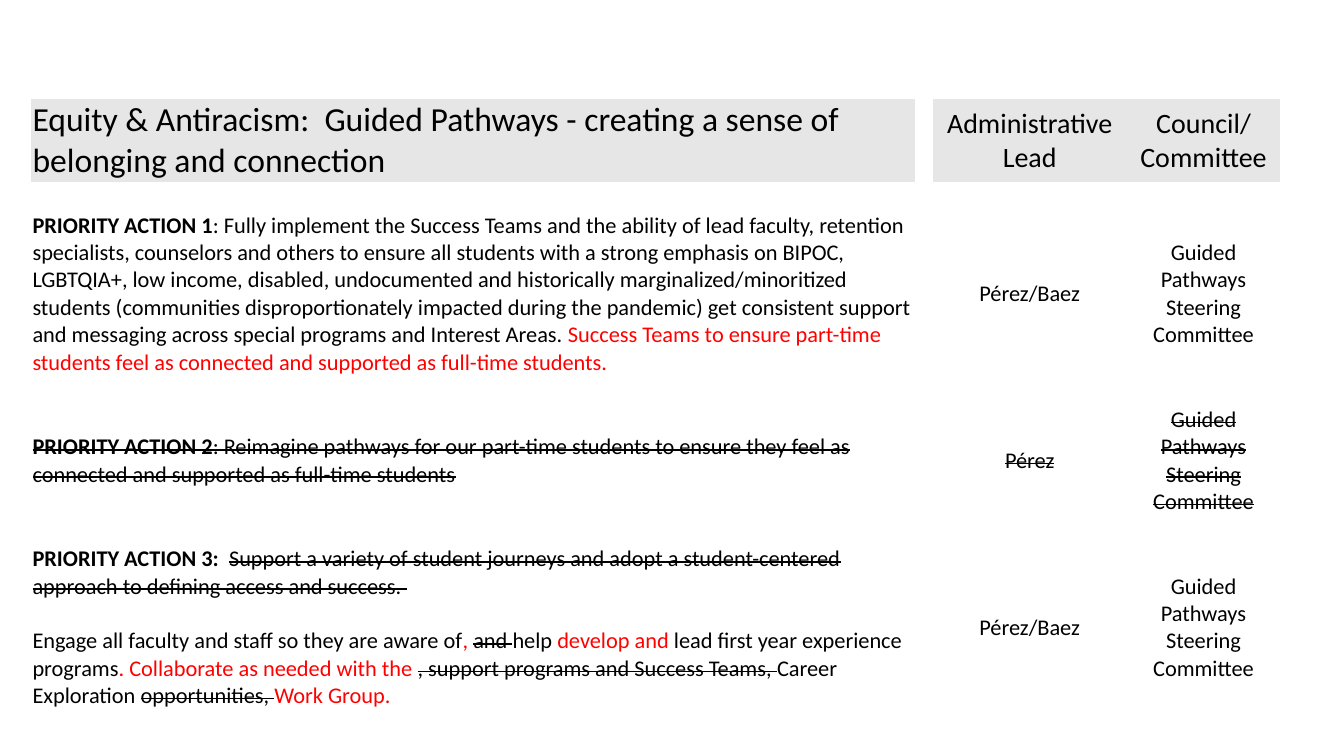
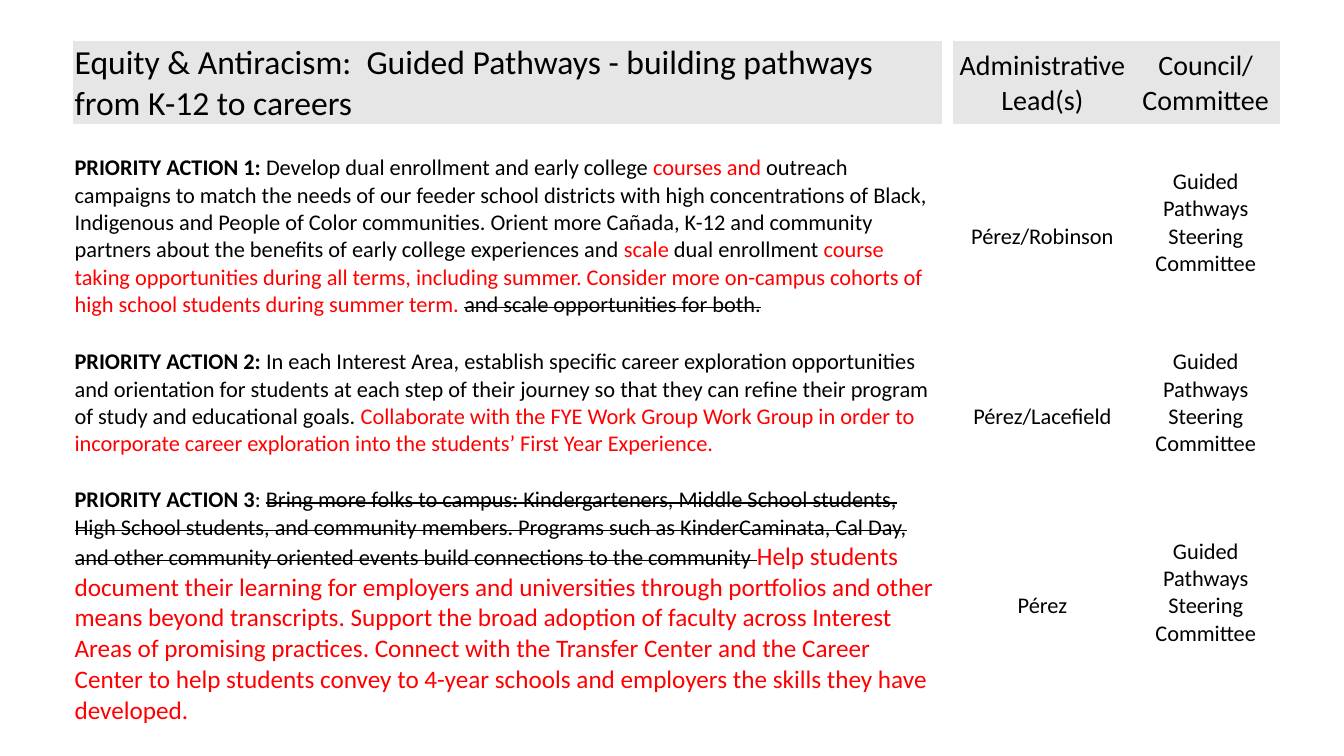
from pptx import Presentation
from pptx.dml.color import RGBColor
from pptx.enum.text import MSO_ANCHOR as Anchor, PP_ALIGN as Align
from pptx.oxml.ns import qn
from pptx.util import Cm, Pt
from lxml.etree import SubElement

COLORS = {"text": "000000", "revision": "FF0000", "band": "E7E6E6"}
FONT = "Calibri"
TITLE_SIZE, HEADING_SIZE, BODY_SIZE, LARGE_SIZE = 24, 20, 16, 18
LINE_HEIGHT = 0.69
INSET = 0.03
HEADER_HEIGHT = 2.08
PLAIN_TABLE_STYLE = "{2D5ABB26-0587-4C30-8999-92F81FD0307C}"
COMMITTEE = "Guided Pathways Steering Committee"

BOLD, STRUCK, RED, LARGE = "bold", "struck", "red", "large"


def row_height(lines):
    return lines * LINE_HEIGHT + INSET


def add_run(paragraph, text, marks=(), size=BODY_SIZE):
    run = paragraph.add_run()
    run.text = text
    font = run.font
    font.name = FONT
    font.size = Pt(LARGE_SIZE if LARGE in marks else size)
    font.bold = BOLD in marks
    font.color.rgb = RGBColor.from_string(COLORS["revision" if RED in marks else "text"])
    if STRUCK in marks:
        run._r.get_or_add_rPr().set("strike", "sngStrike")


def fill_cell(cell, paragraphs, align=Align.LEFT, size=BODY_SIZE, bottom=0.0):
    cell.vertical_anchor = Anchor.MIDDLE
    cell.margin_bottom = Cm(bottom)
    frame = cell.text_frame
    for index, runs in enumerate(paragraphs):
        paragraph = frame.add_paragraph() if index else frame.paragraphs[0]
        paragraph.alignment = align
        if index:
            paragraph.space_before = Pt(19.5)
        for text, *marks in runs:
            add_run(paragraph, text, marks, size)


def prepare_cell(cell):
    cell.fill.background()
    cell.margin_left = cell.margin_right = cell.margin_top = Cm(INSET)
    cell.margin_bottom = 0
    end_format = SubElement(cell.text_frame.paragraphs[0]._p, qn("a:endParaRPr"))
    end_format.set("sz", str(BODY_SIZE * 100))


def fill_header(table, title, lead_heading):
    headings = [
        (0, title, Align.LEFT, TITLE_SIZE),
        (2, lead_heading, Align.CENTER, HEADING_SIZE),
        (3, "Council/ Committee", Align.CENTER, HEADING_SIZE),
    ]
    for column, text, align, size in headings:
        cell = table.cell(0, column)
        fill_cell(cell, [[(text,)]], align, size)
        cell.fill.solid()
        cell.fill.fore_color.rgb = RGBColor.from_string(COLORS["band"])


def fill_action(table, row, action, committee_bottom):
    fill_cell(table.cell(row, 0), action["paragraphs"], bottom=action.get("bottom", 0))
    marks = action.get("marks", ())
    fill_cell(table.cell(row, 2), [[(action["lead"], *marks)]], Align.CENTER)
    fill_cell(table.cell(row, 3), [[(COMMITTEE, *marks)]], Align.CENTER,
              bottom=committee_bottom)


def add_action_slide(presentation, content):
    slide = presentation.slides.add_slide(presentation.slide_layouts[6])
    actions = content["actions"]
    heights = [HEADER_HEIGHT]
    action_rows = []
    for action in actions:
        if action.get("gap", True):
            heights.append(row_height(1))
        action_rows.append(len(heights))
        heights.append(action.get("height") or row_height(action["lines"]))
    left, top = content["position"]
    widths = content["widths"]
    table = slide.shapes.add_table(
        len(heights), len(widths), Cm(left), Cm(top), Cm(sum(widths)), Cm(sum(heights))
    ).table
    table.first_row = table.horz_banding = False
    table._tbl.tblPr.find(qn("a:tableStyleId")).text = PLAIN_TABLE_STYLE
    for column, width in zip(table.columns, widths):
        column.width = Cm(width)
    for row, height in zip(table.rows, heights):
        row.height = Cm(height)
    for cell in table.iter_cells():
        prepare_cell(cell)
    fill_header(table, content["title"], content["lead_heading"])
    for row, action in zip(action_rows, actions):
        fill_action(table, row, action, content["committee_bottom"])


BELONGING = {
    "position": (0.79, 2.49),
    "widths": (22.28, 0.43, 4.9, 3.86),
    "title": "Equity & Antiracism:  Guided Pathways - creating a sense of belonging and connection",
    "lead_heading": "Administrative Lead",
    "committee_bottom": 0,
    "actions": [
        {"lines": 6, "lead": "Pérez/Baez", "paragraphs": [[
            ("PRIORITY ACTION 1", BOLD),
            (": Fully implement the Success Teams and the ability of lead faculty, retention "
             "specialists, counselors and others to ensure all students with a strong emphasis "
             "on BIPOC, LGBTQIA+, low income, disabled, undocumented and historically "
             "marginalized/minoritized students (communities disproportionately impacted during "
             "the pandemic) get consistent support and messaging across special programs and "
             "Interest Areas. ",),
            ("Success Teams to ensure part-time students feel as connected and supported as "
             "full-time students.", RED),
        ]]},
        {"lines": 4, "lead": "Pérez", "marks": (STRUCK,), "paragraphs": [[
            ("PRIORITY ACTION 2", BOLD, STRUCK),
            (": Reimagine pathways for our part-time students to ensure they feel as connected "
             "and supported as full-time students", STRUCK),
        ]]},
        {"lines": 6, "lead": "Pérez/Baez", "paragraphs": [
            [
                ("PRIORITY ACTION 3:  ", BOLD),
                ("Support a variety of student journeys and adopt a student-centered approach "
                 "to defining access and success. ", STRUCK),
            ],
            [
                ("Engage all faculty and staff so they are aware of",),
                (", ", RED),
                ("and ", STRUCK),
                ("help ",),
                ("develop and ", RED),
                ("lead first year experience programs",),
                (". Collaborate as needed with the ", RED),
                (", support programs and Success Teams, ", STRUCK),
                ("Career Exploration ",),
                ("opportunities, ", STRUCK),
                ("Work Group.", RED),
            ],
        ]},
    ],
}

CAREERS = {
    "position": (1.85, 1.04),
    "widths": (21.89, 0.28, 4.5, 3.73),
    "title": "Equity & Antiracism:  Guided Pathways - building pathways from K-12 to careers",
    "lead_heading": "Administrative Lead(s)",
    "committee_bottom": LINE_HEIGHT,
    "actions": [
        {"lines": 6, "lead": "Pérez/Robinson", "paragraphs": [[
            ("PRIORITY ACTION 1: ", BOLD),
            ("Develop dual enrollment and early college ",),
            ("courses and ", RED),
            ("outreach campaigns to match the needs of our feeder school districts with high "
             "concentrations of Black, Indigenous and People of Color communities. Orient more "
             "Cañada, K-12 and community partners about the benefits of early college "
             "experiences and ",),
            ("scale ", RED),
            ("dual enrollment ",),
            ("course taking opportunities during all terms, including summer. Consider more "
             "on-campus cohorts of high school students during summer term. ", RED),
            ("and scale opportunities for both.", STRUCK),
        ]]},
        {"lines": 5, "lead": "Pérez/Lacefield", "bottom": LINE_HEIGHT, "paragraphs": [[
            ("PRIORITY ACTION 2: ", BOLD),
            ("In each Interest Area, establish specific career exploration opportunities and "
             "orientation for students at each step of their journey so that they can refine "
             "their program of study and educational goals. ",),
            ("Collaborate with the FYE Work Group Work Group in order to incorporate career "
             "exploration into the students’ First Year Experience.", RED),
        ]]},
        {"height": 6.02, "gap": False, "lead": "Pérez", "paragraphs": [[
            ("PRIORITY ACTION 3", BOLD),
            (": ",),
            ("Bring more folks to campus: Kindergarteners, Middle School students, High School "
             "students, and community members. Programs such as KinderCaminata, Cal Day, and "
             "other community oriented events build connections to the community ", STRUCK),
            ("Help students document their learning for employers and universities through "
             "portfolios and other means beyond transcripts. Support the broad adoption of "
             "faculty across Interest Areas of promising practices. Connect with the Transfer "
             "Center and the Career Center to help students convey to 4-year schools and "
             "employers the skills they have developed.", RED, LARGE),
        ]]},
    ],
}


def main():
    presentation = Presentation()
    presentation.slide_width = Cm(33.87)
    presentation.slide_height = Cm(19.05)
    for content in (BELONGING, CAREERS):
        add_action_slide(presentation, content)
    presentation.save("out.pptx")


if __name__ == "__main__":
    main()
